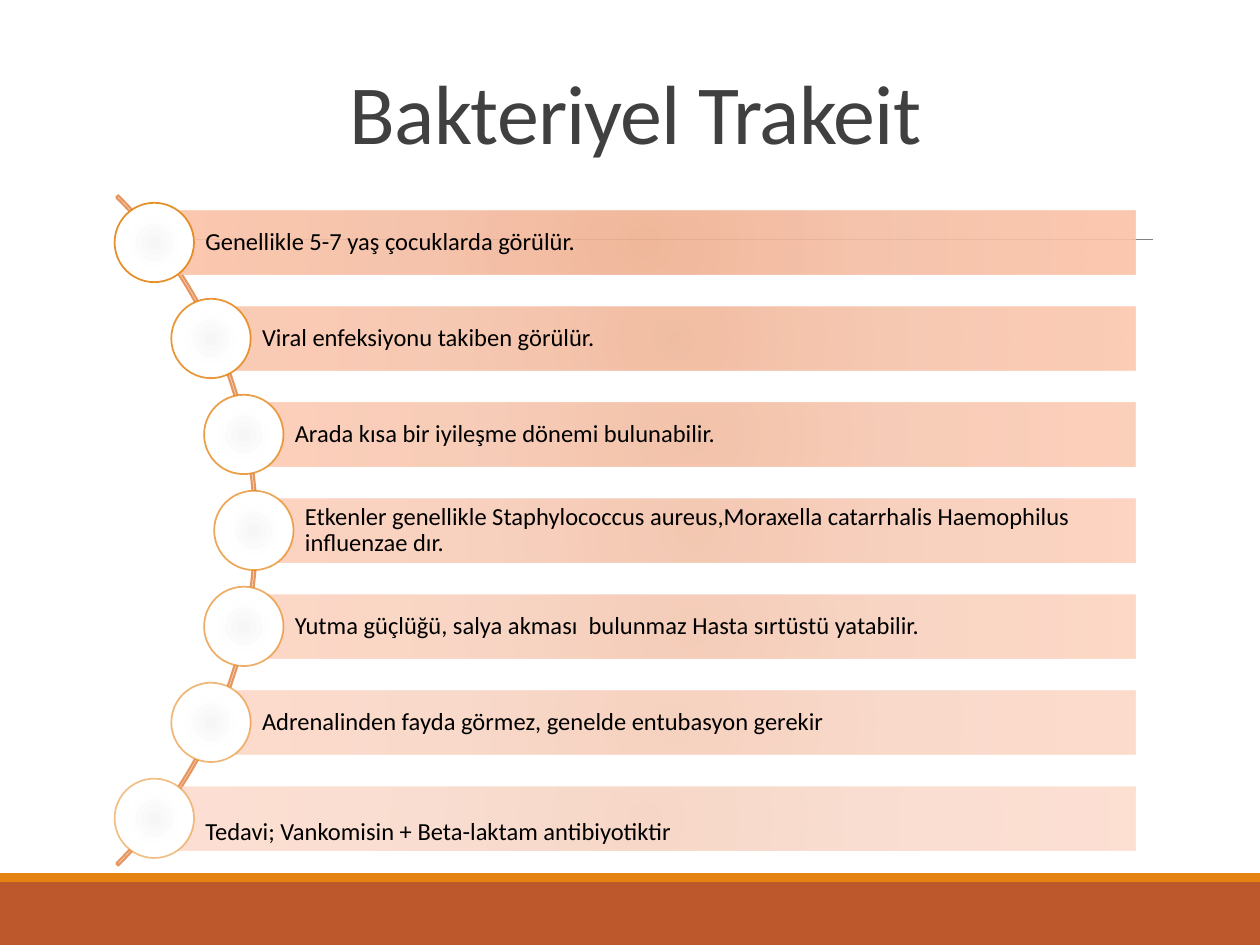
from pptx import Presentation
from pptx.dml.color import RGBColor
from pptx.enum.shapes import MSO_CONNECTOR, MSO_SHAPE
from pptx.enum.text import MSO_ANCHOR, MSO_AUTO_SIZE, PP_ALIGN
from pptx.oxml import parse_xml
from pptx.oxml.ns import nsdecls, qn
from pptx.util import Inches, Pt
from lxml import etree

rgb = RGBColor.from_string


def radial_fill(sp, colors, opacity):
    """Fill a shape with a circular gradient; opacity is in percent."""
    stops = "".join(
        f'<a:gs pos="{pos * 1000}"><a:srgbClr val="{color}">'
        f'<a:alpha val="{opacity * 1000}"/></a:srgbClr></a:gs>'
        for pos, color in zip((0, 45, 100), colors))
    grad = parse_xml(
        f'<a:gradFill {nsdecls("a")} rotWithShape="1"><a:gsLst>{stops}</a:gsLst>'
        '<a:path path="circle"><a:fillToRect l="100000" t="100000" '
        'r="100000" b="100000"/></a:path></a:gradFill>')
    sp.fill.background()
    spPr = sp._element.spPr
    spPr.replace(spPr.find(qn("a:noFill")), grad)


def add_shape(kind, x, y, w, h):
    sp = s.shapes.add_shape(kind, Inches(x), Inches(y), Inches(w), Inches(h))
    sp.shadow.inherit = False
    sp.line.fill.background()
    return sp


prs = Presentation()
prs.slide_width, prs.slide_height = Inches(10), Inches(7.5)
s = prs.slides.add_slide(prs.slide_layouts[5])

# Footer bands and the rule under the title
for y, h, color in ((7, 0.5, "BD582C"), (6.93, 0.07, "E48312")):
    band = add_shape(MSO_SHAPE.RECTANGLE, 0, y, 10, h)
    band.fill.solid()
    band.fill.fore_color.rgb = rgb(color)

rule = s.shapes.add_connector(
    MSO_CONNECTOR.STRAIGHT, Inches(0.98), Inches(1.9), Inches(9.15), Inches(1.9))
rule.line.color.rgb = rgb("808080")
rule.line.width = Pt(0.5)
etree.SubElement(rule._element.spPr, qn("a:effectLst"))

# Title
title = s.shapes.title
title.left, title.top = Inches(0.92), Inches(0.33)
title.width, title.height = Inches(8.25), Inches(1)
tf = title.text_frame
tf.auto_size = MSO_AUTO_SIZE.NONE
tf.vertical_anchor = MSO_ANCHOR.BOTTOM
p = tf.paragraphs[0]
p.alignment = PP_ALIGN.CENTER
p.line_spacing = 0.85
r = p.add_run()
r.text = "Bakteriyel Trakeit"
r.font.name = "Calibri"
r.font.size = Pt(48)
r.font.color.rgb = rgb("404040")
r.font._element.set("spc", "-50")

# Curve that the circles sit on
arc = add_shape(MSO_SHAPE.BLOCK_ARC, -5.48, 0.45, 7.52, 7.52)
for i, value in enumerate((189, 27, 0.003)):
    arc.adjustments[i] = value
arc.fill.background()
arc.line.color.rgb = rgb("E7965F")
arc.line.width = Pt(1.25)

# One bar and one circle per statement, fading downwards
items = [
    (1.23, "Genellikle 5-7 yaş çocuklarda görülür."),
    (1.68, "Viral enfeksiyonu takiben görülür."),
    (1.94, "Arada kısa bir iyileşme dönemi bulunabilir."),
    (2.02, "Etkenler genellikle Staphylococcus aureus,Moraxella catarrhalis "
           "Haemophilus influenzae dır."),
    (1.94, "Yutma güçlüğü, salya akması  bulunmaz Hasta sırtüstü yatabilir."),
    (1.68, "Adrenalinden fayda görmez, genelde entubasyon gerekir"),
    (1.23, "Tedavi; Vankomisin + Beta-laktam antibiyotiktir"),
]
bar_right, first_top, last_top = 9.01, 1.67, 6.24
last = len(items) - 1
for i, (x, text) in enumerate(items):
    y = first_top + i * (last_top - first_top) / last
    opacity = round(90 - i * 40 / last)

    bar = add_shape(MSO_SHAPE.RECTANGLE, x, y, bar_right - x, 0.51)
    radial_fill(bar, ("F0B191", "F5BEA4", "FDC3A8"), opacity)
    tf = bar.text_frame
    tf.word_wrap = True
    tf.margin_left = Inches(0.4)
    tf.margin_top = tf.margin_right = tf.margin_bottom = Inches(0.04)
    tf.vertical_anchor = MSO_ANCHOR.BOTTOM if i == last else MSO_ANCHOR.MIDDLE
    p = tf.paragraphs[0]
    p.alignment = PP_ALIGN.LEFT
    p.line_spacing = 0.9
    r = p.add_run()
    r.text = text
    r.font.name = "Calibri"
    r.font.size = Pt(14)
    r.font.color.rgb = rgb("000000")

    circle = add_shape(MSO_SHAPE.OVAL, x - 0.32, y - 0.06, 0.63, 0.63)
    radial_fill(circle, ("F6F6F6", "FEFEFE", "FFFFFF"), 100)
    circle.line.color.rgb = rgb("E48312")
    circle.line.width = Pt(1)
    line_color = circle._element.spPr.find(qn("a:ln")).find(".//" + qn("a:srgbClr"))
    etree.SubElement(line_color, qn("a:alpha")).set("val", str(opacity * 1000))

prs.save("out.pptx")
